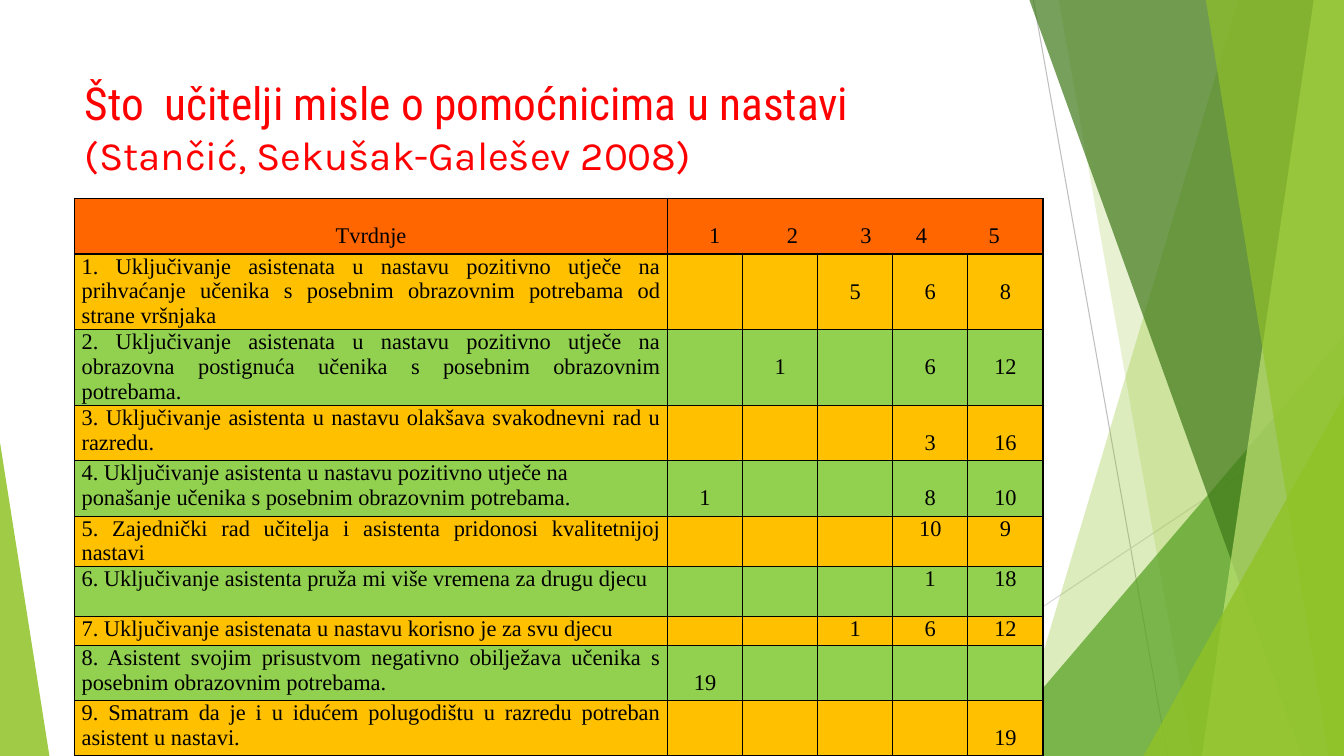
from lxml import etree
from pptx import Presentation
from pptx.dml.color import RGBColor
from pptx.enum.shapes import MSO_CONNECTOR, MSO_SHAPE
from pptx.enum.text import MSO_ANCHOR, MSO_AUTO_SIZE, PP_ALIGN
from pptx.oxml import parse_xml
from pptx.oxml.ns import nsdecls, qn
from pptx.util import Inches, Pt

STRAIGHT = MSO_CONNECTOR.STRAIGHT
TRIANGLE = MSO_SHAPE.ISOSCELES_TRIANGLE
TOP = MSO_ANCHOR.TOP
NO_AUTOFIT = MSO_AUTO_SIZE.NONE
LEFT, CENTER, JUSTIFY = PP_ALIGN.LEFT, PP_ALIGN.CENTER, PP_ALIGN.JUSTIFY

WIDTH, HEIGHT = 13.33, 7.5
TABLE_FONT = "Times New Roman"
TABLE_SIZE = 16
LINE_HEIGHT = 0.25
HEADER_FILL = "FF6600"
ROW_FILLS = ["FFC000", "92D050"]
COLUMN_WIDTHS = [5.88] + [0.745] * 5
HEADER_HEIGHT = 0.55
GRADE_STOPS = [0.40, 1.17, 1.90, 2.45, 3.17]

# Statement, counts by grade, row height, lines above the counts, alignment
STATEMENTS = [
    ("1. Uključivanje asistenata u nastavu pozitivno utječe na prihvaćanje učenika "
     "s posebnim obrazovnim potrebama od strane vršnjaka",
     {3: 5, 4: 6, 5: 8}, 0.75, 1, JUSTIFY),
    ("2. Uključivanje asistenata u nastavu pozitivno utječe na obrazovna postignuća "
     "učenika s posebnim obrazovnim potrebama.",
     {2: 1, 4: 6, 5: 12}, 0.75, 1, JUSTIFY),
    ("3. Uključivanje asistenta u nastavu olakšava svakodnevni rad u razredu.",
     {4: 3, 5: 16}, 0.55, 1, JUSTIFY),
    ("4. Uključivanje asistenta u nastavu pozitivno utječe na ponašanje učenika "
     "s posebnim obrazovnim potrebama.",
     {1: 1, 4: 8, 5: 10}, 0.55, 1, LEFT),
    ("5. Zajednički rad učitelja i asistenta pridonosi kvalitetnijoj nastavi",
     {4: 10, 5: 9}, 0.5, 0, JUSTIFY),
    ("6. Uključivanje asistenta pruža mi više vremena za drugu djecu",
     {4: 1, 5: 18}, 0.5, 0, JUSTIFY),
    ("7. Uključivanje asistenata u nastavu korisno je za svu djecu",
     {3: 1, 4: 6, 5: 12}, 0.28, 0, JUSTIFY),
    ("8. Asistent svojim prisustvom negativno obilježava učenika s posebnim "
     "obrazovnim potrebama.",
     {1: 19}, 0.55, 1, JUSTIFY),
    ("9. Smatram da je i u idućem polugodištu u razredu potreban asistent u nastavi.",
     {5: 19}, 0.55, 1, JUSTIFY),
]


def rgb(value):
    return RGBColor.from_string(value)


def add_run(paragraph, text, font, size, color):
    run = paragraph.add_run()
    run.text = text
    run.font.name = font
    run.font.size = Pt(size)
    run.font.color.rgb = rgb(color)


# Background decoration
def add_line(slide, start, end, color):
    line = slide.shapes.add_connector(STRAIGHT, *map(Inches, start + end))
    line.line.color.rgb = rgb(color)
    line.line.width = Pt(0.75)
    etree.SubElement(line._element.spPr, qn("a:effectLst"))


def paint(shape, color, opacity):
    shape.shadow.inherit = False
    shape.line.fill.background()
    shape.fill.solid()
    shape.fill.fore_color.rgb = rgb(color)
    color_element = shape._element.spPr.find(qn("a:solidFill"))[0]
    etree.SubElement(color_element, qn("a:alpha"), val=str(opacity * 1000))


def add_band(slide, top_x, bottom_x, color, opacity):
    """Fill from a slanted edge to the right side of the slide."""
    builder = slide.shapes.build_freeform(Inches(top_x), 0)
    corners = [(WIDTH, 0), (WIDTH, HEIGHT), (bottom_x, HEIGHT)]
    builder.add_line_segments([(Inches(x), Inches(y)) for x, y in corners])
    paint(builder.convert_to_shape(), color, opacity)


def add_triangle(slide, left, top, width, apex, color, opacity):
    """Stand a triangle on the bottom edge of the slide."""
    box = map(Inches, (left, top, width, HEIGHT - top))
    triangle = slide.shapes.add_shape(TRIANGLE, *box)
    triangle.adjustments[0] = apex
    paint(triangle, color, opacity)


def add_decoration(slide):
    add_line(slide, (10.25, 0), (11.58, HEIGHT), "BFBFBF")
    add_line(slide, (WIDTH, 4.03), (8.12, HEIGHT), "D9D9D9")
    add_band(slide, 12.28, 10.04, "90C226", 30)
    add_band(slide, 10.5, 11.83, "90C226", 20)
    add_triangle(slide, 9.77, 3.33, 3.56, 1, "54A021", 72)
    add_band(slide, 10.21, 12.91, "3F7819", 70)
    add_band(slide, 13.03, 11.92, "C0E474", 70)
    add_band(slide, 11.96, 13.18, "90C226", 65)
    add_triangle(slide, 11.34, 3.93, 1.99, 1, "90C226", 80)
    add_triangle(slide, 0, 4.39, 0.49, 0, "90C226", 85)


# Title
def fill_title(slide):
    title = slide.shapes.title
    title.left, title.top = Inches(0.74), Inches(0.67)
    title.width, title.height = Inches(9.4), Inches(1.44)
    frame = title.text_frame
    frame.word_wrap = True
    frame.auto_size = NO_AUTOFIT
    frame.vertical_anchor = TOP
    frame.margin_top = Inches(0.08)
    paragraph = frame.paragraphs[0]
    paragraph.alignment = LEFT
    add_run(paragraph, "Što  učitelji misle o pomoćnicima u nastavi",
            "Roboto Condensed", 32.4, "FF0000")
    paragraph.add_line_break()
    add_run(paragraph, "(Stančić, Sekušak-Galešev 2008)", "Karla", 28.8, "FF0000")


# Table
def add_borders(cell):
    properties = cell._tc.get_or_add_tcPr()
    for index, side in enumerate(("lnL", "lnR", "lnT", "lnB")):
        properties.insert(index, parse_xml(
            f'<a:{side} {nsdecls("a")} w="12700"><a:solidFill>'
            f'<a:srgbClr val="000000"/></a:solidFill></a:{side}>'))


def fill_cell(cell, text, fill, alignment, lines_above=0):
    cell.fill.solid()
    cell.fill.fore_color.rgb = rgb(fill)
    add_borders(cell)
    cell.vertical_anchor = TOP
    cell.margin_left = cell.margin_right = Inches(0.07)
    cell.margin_top = Inches(LINE_HEIGHT * lines_above)
    cell.margin_bottom = 0
    paragraph = cell.text_frame.paragraphs[0]
    paragraph.alignment = alignment
    if text:
        add_run(paragraph, text, TABLE_FONT, TABLE_SIZE, "000000")
    else:
        etree.SubElement(paragraph._p, qn("a:endParaRPr"), sz=str(TABLE_SIZE * 100))


def add_tab_stops(cell, positions):
    properties = cell.text_frame.paragraphs[0]._p.get_or_add_pPr()
    tab_list = etree.SubElement(properties, qn("a:tabLst"))
    for position in positions:
        etree.SubElement(tab_list, qn("a:tab"), pos=str(Inches(position)), algn="ctr")


def add_survey_table(slide):
    heights = [HEADER_HEIGHT] + [statement[2] for statement in STATEMENTS]
    frame = slide.shapes.add_table(
        len(heights), len(COLUMN_WIDTHS), Inches(0.74), Inches(1.97),
        Inches(sum(COLUMN_WIDTHS)), Inches(sum(heights)))
    table = frame.table
    table.first_row = table.horz_banding = False
    for column, width in zip(table.columns, COLUMN_WIDTHS):
        column.width = Inches(width)
    for row, height in zip(table.rows, heights):
        row.height = Inches(height)

    # Header row with the grades on tab stops
    fill_cell(table.cell(0, 0), "Tvrdnje", HEADER_FILL, CENTER, 1)
    grades = table.cell(0, 1)
    grades.merge(table.cell(0, 5))
    fill_cell(grades, "".join(f"\t{grade}" for grade in range(1, 6)),
              HEADER_FILL, LEFT, 1)
    add_tab_stops(grades, GRADE_STOPS)
    for grade in range(2, 6):
        fill_cell(table.cell(0, grade), "", HEADER_FILL, CENTER)

    # One row per statement
    for row, (text, counts, _, lines_above, alignment) in enumerate(STATEMENTS, 1):
        fill = ROW_FILLS[(row - 1) % 2]
        fill_cell(table.cell(row, 0), text, fill, alignment)
        for grade in range(1, 6):
            count = str(counts.get(grade, ""))
            fill_cell(table.cell(row, grade), count, fill, CENTER,
                      lines_above if count else 0)


def main():
    presentation = Presentation()
    presentation.slide_width = Inches(WIDTH)
    presentation.slide_height = Inches(HEIGHT)
    slide = presentation.slides.add_slide(presentation.slide_layouts[5])
    add_decoration(slide)
    fill_title(slide)
    add_survey_table(slide)
    presentation.save("out.pptx")


if __name__ == "__main__":
    main()
